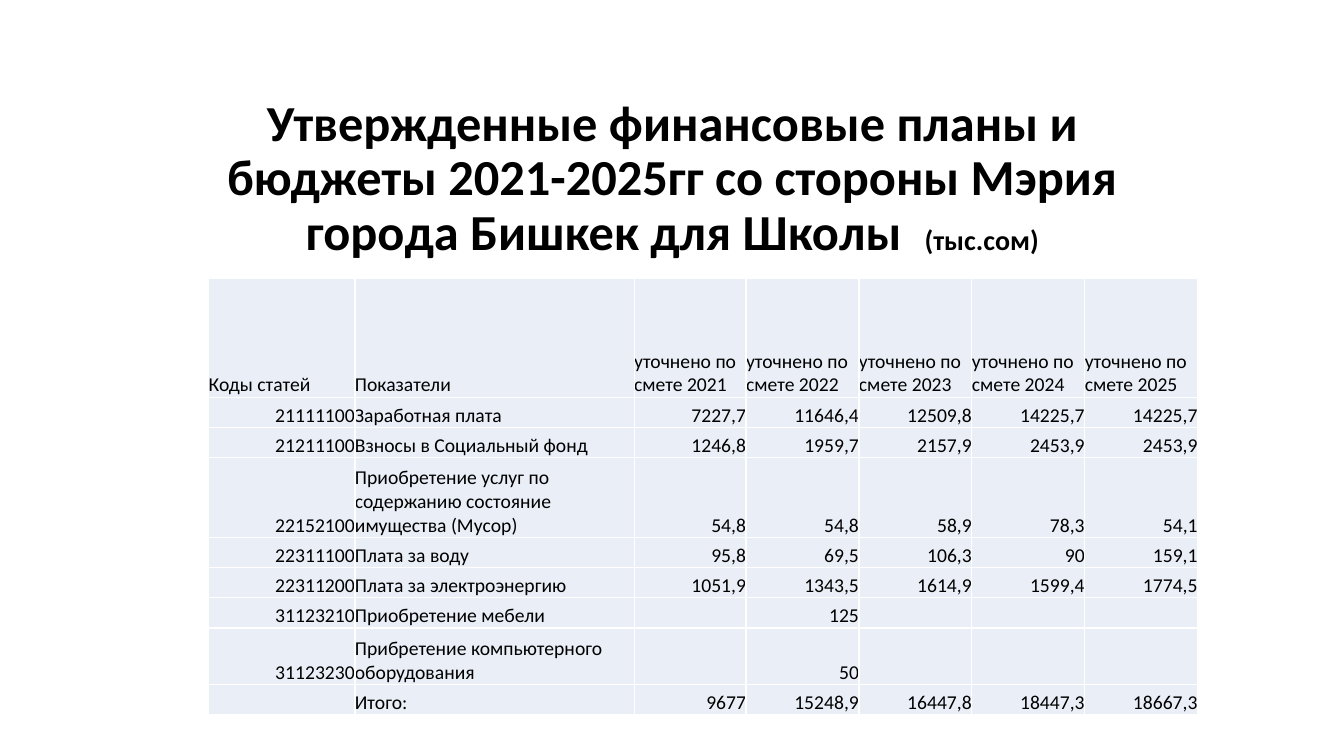
from dataclasses import dataclass

from lxml.etree import SubElement
from pptx import Presentation
from pptx.dml.color import RGBColor
from pptx.enum.text import MSO_ANCHOR, MSO_AUTO_SIZE, PP_ALIGN
from pptx.oxml import parse_xml
from pptx.oxml.ns import nsdecls, qn
from pptx.util import Inches, Pt


@dataclass(frozen=True)
class Theme:
    font: str = "Calibri"
    text: RGBColor = RGBColor(0, 0, 0)
    cell: RGBColor = RGBColor(0xEA, 0xEF, 0xF7)
    border: str = "FFFFFF"
    title_size: int = 36
    unit_size: int = 20
    table_size: int = 14


THEME = Theme()


def add_run(p, text, size, bold=False):
    r = p.add_run()
    r.text = text
    r.font.name = THEME.font
    r.font.size = Pt(size)
    r.font.bold = bold
    r.font.color.rgb = THEME.text


def set_borders(cell):
    """Draw a 1 pt line on all four sides of the cell."""
    tc_pr = cell._tc.get_or_add_tcPr()
    for i, side in enumerate(("lnL", "lnR", "lnT", "lnB")):
        tc_pr.insert(i, parse_xml(
            f'<a:{side} {nsdecls("a")} w="{Pt(1)}"><a:solidFill>'
            f'<a:srgbClr val="{THEME.border}"/></a:solidFill></a:{side}>'))


prs = Presentation()
prs.slide_width, prs.slide_height = Inches(13.33), Inches(7.5)
s = prs.slides.add_slide(prs.slide_layouts[5])

title = s.shapes.title
title.left, title.top = Inches(1.67), Inches(1.23)
title.width, title.height = Inches(10), Inches(1.41)
tf = title.text_frame
tf.word_wrap = True
tf.auto_size = MSO_AUTO_SIZE.NONE
tf.vertical_anchor = MSO_ANCHOR.BOTTOM
p = tf.paragraphs[0]
p.alignment = PP_ALIGN.CENTER
p.line_spacing = 0.9
add_run(p, "Утвержденные финансовые планы и бюджеты 2021-2025гг "
           "со стороны Мэрия города Бишкек для Школы  ", THEME.title_size, True)
add_run(p, "(тыс.сом)", THEME.unit_size, True)

YEARS = range(2021, 2026)
# Row height, then the cell texts
BUDGET = [
    (1.18, ["Коды статей", "Показатели"] + [f"уточнено по смете {y}" for y in YEARS]),
    (0.3, ["21111100", "Заработная плата",
           "7227,7", "11646,4", "12509,8", "14225,7", "14225,7"]),
    (0.3, ["21211100", "Взносы в Социальный фонд",
           "1246,8", "1959,7", "2157,9", "2453,9", "2453,9"]),
    (0.79, ["22152100", "Приобретение услуг по содержанию состояние имущества (Мусор)",
            "54,8", "54,8", "58,9", "78,3", "54,1"]),
    (0.3, ["22311100", "Плата за воду", "95,8", "69,5", "106,3", "90", "159,1"]),
    (0.3, ["22311200", "Плата за электроэнергию",
           "1051,9", "1343,5", "1614,9", "1599,4", "1774,5"]),
    (0.3, ["31123210", "Приобретение мебели", "", "125", "", "", ""]),
    (0.56, ["31123230", "Прибретение компьютерного оборудования", "", "50", "", "", ""]),
    (0.3, ["", "Итого:", "9677", "15248,9", "16447,8", "18447,3", "18667,3"]),
]
COLUMN_WIDTHS = [1.45, 2.77, 1.11] + [1.12] * 4

table = s.shapes.add_table(len(BUDGET), len(COLUMN_WIDTHS), Inches(2.07), Inches(2.76),
                           Inches(9.83), Inches(4.3)).table
table.first_row = False
table.horz_banding = False
for column, width in zip(table.columns, COLUMN_WIDTHS):
    column.width = Inches(width)

for row, (height, texts) in enumerate(BUDGET):
    table.rows[row].height = Inches(height)
    for col, text in enumerate(texts):
        cell = table.cell(row, col)
        cell.margin_left = cell.margin_right = cell.margin_top = cell.margin_bottom = 0
        cell.vertical_anchor = MSO_ANCHOR.BOTTOM
        cell.fill.solid()
        cell.fill.fore_color.rgb = THEME.cell
        set_borders(cell)
        p = cell.text_frame.paragraphs[0]
        is_label = row == 0 or col == 1
        p.alignment = PP_ALIGN.LEFT if is_label else PP_ALIGN.RIGHT
        if text:
            add_run(p, text, THEME.table_size)
        else:
            SubElement(p._p, qn("a:endParaRPr"), sz=str(THEME.table_size * 100))

prs.save("out.pptx")
